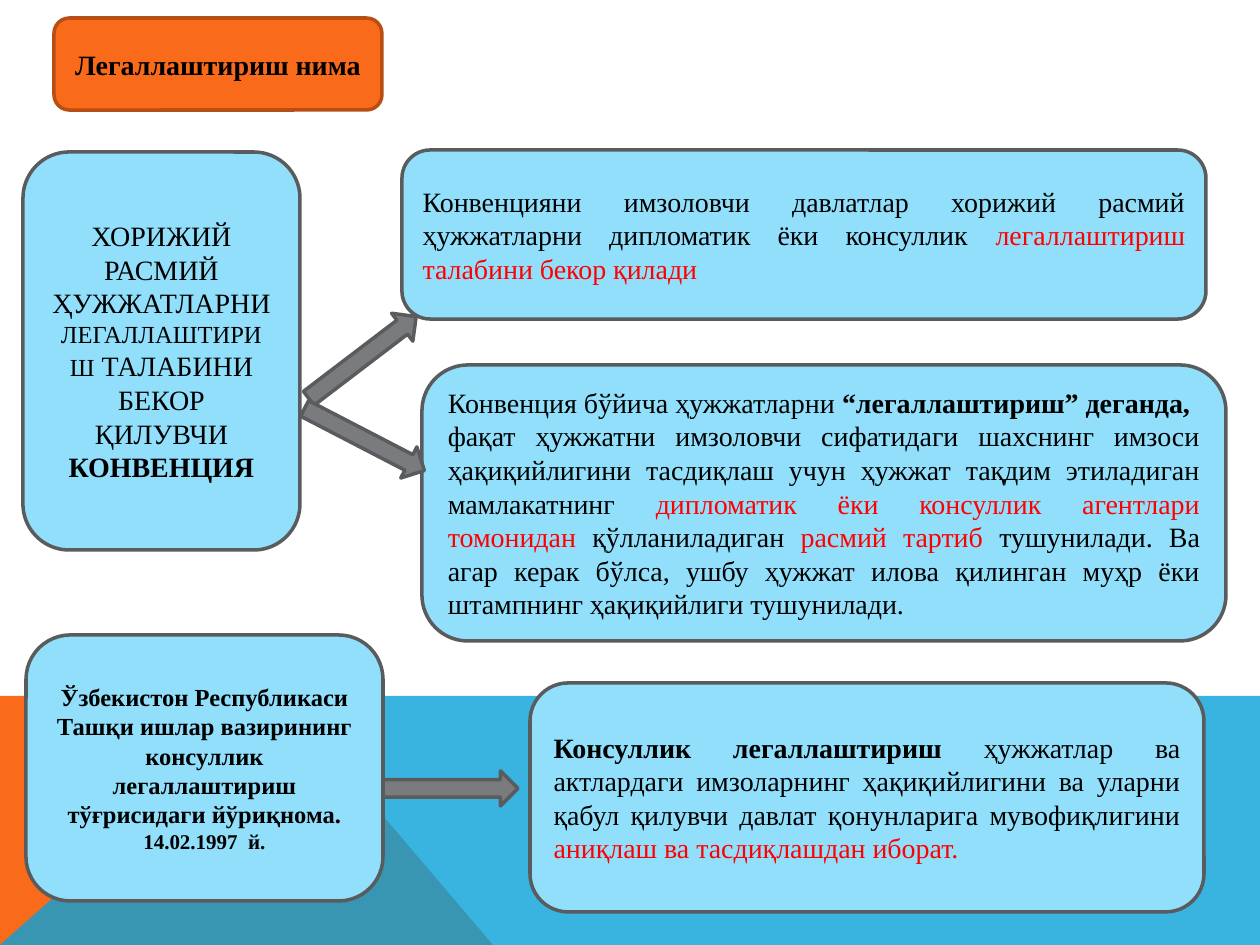
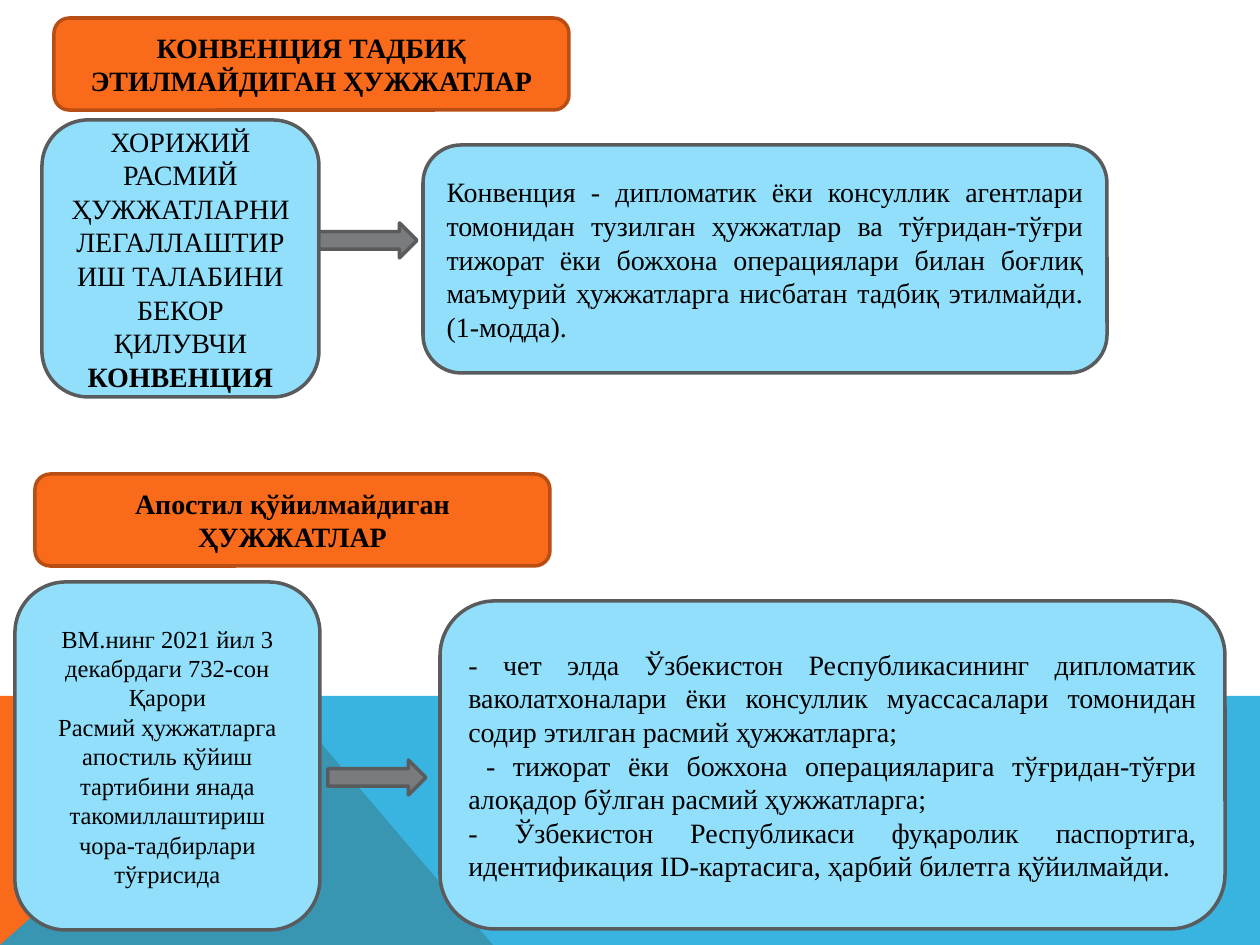
from lxml import etree
from pptx import Presentation
from pptx.dml.color import RGBColor
from pptx.enum.shapes import MSO_SHAPE as Shape
from pptx.enum.text import MSO_ANCHOR as Anchor, PP_ALIGN as Align
from pptx.oxml.ns import qn
from pptx.util import Pt

PX = 914400 / 126
SLIDE_BOX = (0, 0, 1260, 945)
FONT = "Times New Roman"
COLORS = {
    "orange": "F96A1B",
    "orange_line": "B84E14",
    "sky": "91DFFB",
    "band": "08A1D9",
    "arrow": "797B7E",
    "gray_line": "5A5B5D",
    "text": "000000",
    "red": "FF0000",
}
BOLD = {"bold": True}
RED = {"color": "red"}


def px(length):
    """Turn px into EMU."""
    return round(length * PX)


def color(name):
    """Look up a named colour."""
    return RGBColor.from_string(COLORS[name])


def within(box, part):
    """Shift a part's rectangle by the corner of its box."""
    return (box[0] + part[0], box[1] + part[1], part[2], part[3])


def add_block(slide, box, kind, fill, line):
    """Add a filled preset shape with a 2 pt outline."""
    shape = slide.shapes.add_shape(kind, *map(px, box))
    shape.shadow.inherit = False
    shape.fill.solid()
    shape.fill.fore_color.rgb = color(fill)
    shape.line.color.rgb = color(line)
    shape.line.width = Pt(2)
    return shape


def write(shape, paragraphs, size, align):
    """Fill a shape with paragraphs of (text, style) runs."""
    frame = shape.text_frame
    frame.word_wrap = True
    frame.vertical_anchor = Anchor.MIDDLE
    for index, runs in enumerate(paragraphs):
        paragraph = frame.add_paragraph() if index else frame.paragraphs[0]
        paragraph.alignment = align
        for text, style in runs:
            run = paragraph.add_run()
            run.text = text
            run.font.name = FONT
            run.font.size = Pt(style.get("size", size))
            run.font.bold = style.get("bold", False)
            run.font.color.rgb = color(style.get("color", "text"))


def add_title(slide, box, text):
    """Add an orange heading plate."""
    shape = add_block(slide, box, Shape.ROUNDED_RECTANGLE, "orange", "orange_line")
    write(shape, [[(text, BOLD)]], 16, Align.CENTER)


def add_card(slide, box, paragraphs, size=16, align=Align.JUSTIFY):
    """Add a light blue text card."""
    shape = add_block(slide, box, Shape.ROUNDED_RECTANGLE, "sky", "gray_line")
    write(shape, paragraphs, size, align)


def add_arrow(slide, box, rotation=0):
    """Add a gray block arrow."""
    shape = add_block(slide, box, Shape.RIGHT_ARROW, "arrow", "gray_line")
    shape.rotation = rotation


def add_band(slide, points, fill, opacity=100):
    """Add an outlined-free polygon of the footer."""
    builder = slide.shapes.build_freeform(*points[0], scale=PX)
    builder.add_line_segments(points[1:], close=True)
    shape = builder.convert_to_shape()
    shape.shadow.inherit = False
    shape.line.fill.background()
    shape.fill.solid()
    shape.fill.fore_color.rgb = color(fill)
    if opacity < 100:
        tint = shape.fill._xPr.find(qn("a:solidFill"))[0]
        etree.SubElement(tint, qn("a:alpha")).set("val", str(opacity * 1000))


def add_footer(slide, box):
    """Draw the orange wedge and the translucent blue band."""
    left, top, width, height = box
    right, bottom, upper = left + width, top + height, top + height - 249
    peak = (left + 281, upper)
    add_band(slide, [(left, bottom), (left, upper), peak, (left + 493, bottom)], "orange")
    add_band(slide, [(left, bottom), peak, (right, upper), (right, bottom)], "band", 80)


def add_step(slide, box, source, arrow, target):
    """Place a centred source card, an arrow and the card it leads to."""
    source_box, source_text, source_size = source
    target_box, target_text = target
    add_card(slide, within(box, source_box), source_text, source_size, Align.CENTER)
    add_arrow(slide, within(box, arrow))
    add_card(slide, within(box, target_box), target_text)


def add_convention_fork(slide, box):
    """Place the convention card with its two branches."""
    add_card(slide, within(box, (379, 0, 804, 169)), [[
        ("Конвенцияни имзоловчи давлатлар хорижий расмий ҳужжатларни дипломатик ёки консуллик ", {}),
        ("легаллаштириш талабини бекор қилади", RED),
    ]])
    add_card(slide, within(box, (399, 215, 804, 276)), [
        [
            ("Конвенция бўйича ҳужжатларни ", {}),
            ("“легаллаштириш” деганда,", BOLD),
        ],
        [
            ("фақат ҳужжатни имзоловчи сифатидаги шахснинг имзоси ҳақиқийлигини тасдиқлаш "
             "учун ҳужжат тақдим этиладиган мамлакатнинг ", {}),
            ("дипломатик ёки консуллик агентлари томонидан ", RED),
            ("қўлланиладиган ", {}),
            ("расмий тартиб ", RED),
            ("тушунилади. Ва агар керак бўлса, ушбу ҳужжат илова қилинган муҳр ёки "
             "штампнинг ҳақиқийлиги тушунилади.", {}),
        ],
    ])
    add_card(slide, within(box, (0, 2, 277, 398)), [[
        ("ХОРИЖИЙ РАСМИЙ ҲУЖЖАТЛАРНИ ", {}),
        ("ЛЕГАЛЛАШТИРИШ", {"size": 14}),
        (" ТАЛАБИНИ БЕКОР ҚИЛУВЧИ ", {}),
        ("КОНВЕНЦИЯ", BOLD),
    ]], align=Align.CENTER)
    add_arrow(slide, within(box, (272, 190, 135, 35)), 322.7)
    add_arrow(slide, within(box, (274, 272, 135, 35)), 27.4)


def build_legalization(slide):
    """Build the slide that explains legalization."""
    add_footer(slide, SLIDE_BOX)
    add_convention_fork(slide, (23, 150, 1203, 491))
    add_title(slide, (54, 18, 328, 92), "Легаллаштириш нима")
    instruction = [[
        ("Ўзбекистон Республикаси Ташқи ишлар вазирининг консуллик легаллаштириш "
         "тўғрисидаги йўриқнома. ", BOLD),
        ("14.02.1997  й.", {"size": 12, "bold": True}),
    ]]
    definition = [[
        ("Консуллик легаллаштириш ", BOLD),
        ("ҳужжатлар ва актлардаги имзоларнинг ҳақиқийлигини ва уларни қабул қилувчи "
         "давлат қонунларига мувофиқлигини ", {}),
        ("аниқлаш ва тасдиқлашдан иборат.", RED),
    ]]
    add_step(
        slide, (26, 635, 1178, 277),
        ((0, 0, 357, 266), instruction, 14),
        (357, 136, 135, 35),
        ((504, 48, 674, 229), definition),
    )


def build_exceptions(slide):
    """Build the slide on documents left outside the rules."""
    add_footer(slide, SLIDE_BOX)
    add_title(slide, (54, 18, 515, 92), "КОНВЕНЦИЯ ТАДБИҚ ЭТИЛМАЙДИГАН ҲУЖЖАТЛАР")
    convention = [[
        ("ХОРИЖИЙ РАСМИЙ ҲУЖЖАТЛАРНИ ЛЕГАЛЛАШТИРИШ ТАЛАБИНИ БЕКОР ҚИЛУВЧИ ", {}),
        ("КОНВЕНЦИЯ", BOLD),
    ]]
    exclusion = [[
        ("Конвенция - дипломатик ёки консуллик агентлари томонидан тузилган ҳужжатлар ва "
         "тўғридан-тўғри тижорат ёки божхона операциялари билан боғлиқ маъмурий "
         "ҳужжатларга нисбатан тадбиқ этилмайди. (1-модда).", {}),
    ]]
    add_step(
        slide, (42, 120, 1065, 277),
        ((0, 0, 277, 277), convention, 16),
        (277, 103, 98, 35),
        ((381, 25, 684, 228), exclusion),
    )
    add_title(slide, (35, 474, 515, 92), "Апостил қўйилмайдиган ҲУЖЖАТЛАР")
    decree = [
        [("ВМ.нинг 2021 йил 3 декабрдаги 732-сон Қарори", {})],
        [("Расмий ҳужжатларга апостиль қўйиш тартибини янада такомиллаштириш "
          "чора-тадбирлари тўғрисида", {})],
    ]
    documents = [
        [("- чет элда Ўзбекистон Республикасининг дипломатик ваколатхоналари ёки консуллик "
          "муассасалари томонидан содир этилган расмий ҳужжатларга;", {})],
        [(" - тижорат ёки божхона операцияларига тўғридан-тўғри алоқадор бўлган расмий "
          "ҳужжатларга;", {})],
        [("- Ўзбекистон Республикаси фуқаролик паспортига, идентификация ID-картасига, "
          "ҳарбий билетга қўйилмайди.", {})],
    ]
    add_step(
        slide, (15, 582, 1210, 348),
        ((0, 0, 305, 348), decree, 14),
        (313, 178, 98, 35),
        ((425, 19, 785, 328), documents),
    )


def main():
    """Build both slides and save the presentation."""
    presentation = Presentation()
    presentation.slide_width = px(SLIDE_BOX[2])
    presentation.slide_height = px(SLIDE_BOX[3])
    for build in (build_legalization, build_exceptions):
        build(presentation.slides.add_slide(presentation.slide_layouts[6]))
    presentation.save("out.pptx")


if __name__ == "__main__":
    main()
